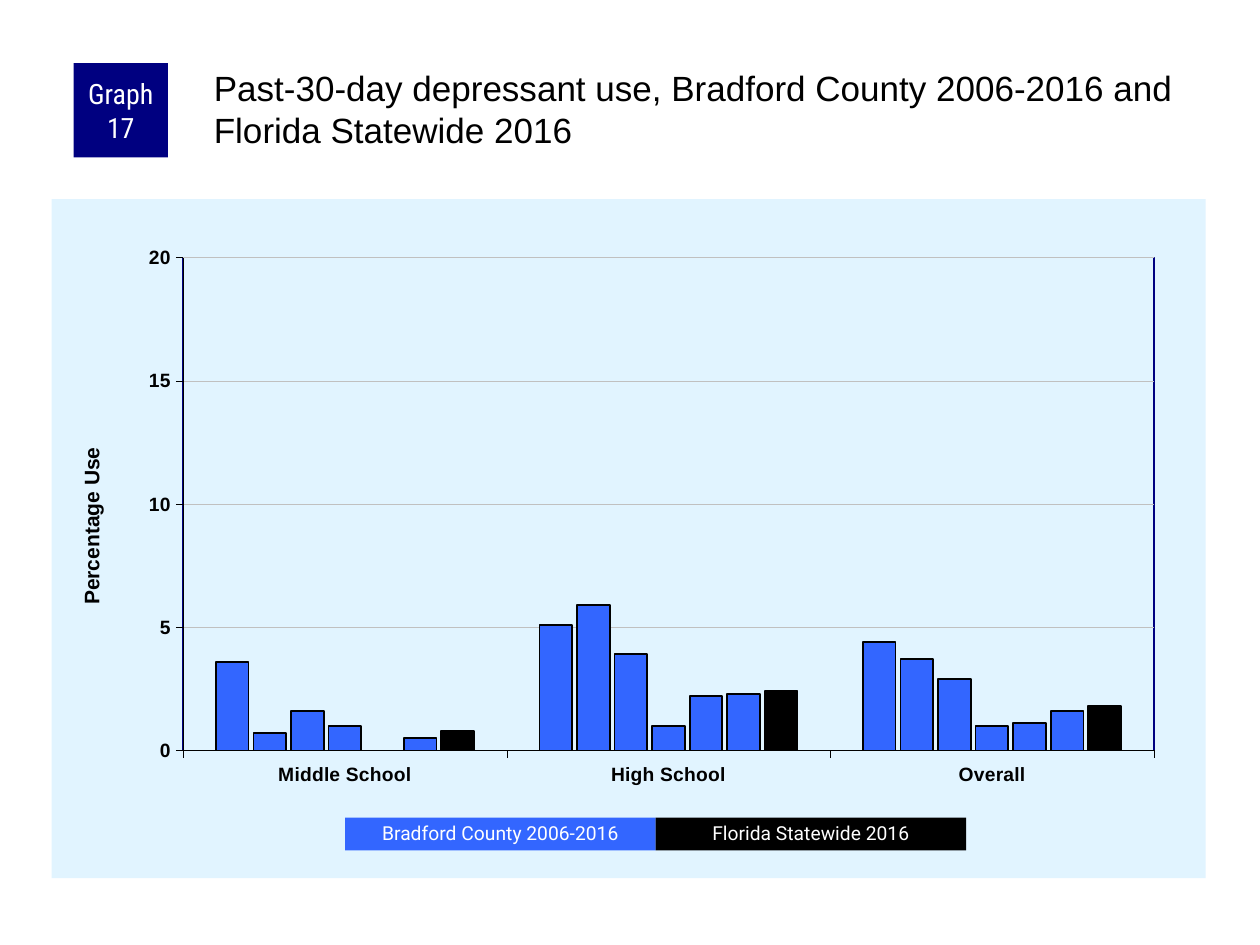
from dataclasses import dataclass

from lxml import etree
from pptx import Presentation
from pptx.chart import data as cd
from pptx.dml.color import RGBColor
from pptx.enum import chart as ch, shapes, text
from pptx.util import Pt

C = "http://schemas.openxmlformats.org/drawingml/2006/chart"
A = "http://schemas.openxmlformats.org/drawingml/2006/main"


@dataclass(frozen=True)
class Theme:
    navy: str = "000080"
    blue: str = "3366FF"
    black: str = "000000"
    white: str = "FFFFFF"
    panel: str = "E1F4FF"
    grid: str = "C0C0C0"
    body_font: str = "Arial"
    tag_font: str = "Roboto Condensed"
    key_font: str = "Roboto"
    title_size: float = 20
    tag_size: float = 16
    axis_title_size: float = 12
    label_size: float = 11
    chart_size: float = 8


@dataclass(frozen=True)
class Box:
    x: float
    y: float
    w: float
    h: float

    def pts(self) -> tuple:
        return Pt(self.x), Pt(self.y), Pt(self.w), Pt(self.h)


@dataclass(frozen=True)
class Label:
    content: str
    box: Box
    fill: str
    font: str
    size: float
    spacing: float = 1.0
    insets: tuple = (7.2, 3.6, 7.2, 3.6)


T = Theme()
KEY_X, KEY_Y, KEY_W, KEY_H = 197.3, 467.3, 177.4, 18.7
LABELS = [
    Label("Graph 17", Box(42, 36, 54, 54), T.navy, T.tag_font, T.tag_size,
          insets=(3.6, 0, 3.6, 0)),
] + [
    Label(name, Box(KEY_X + i * KEY_W, KEY_Y, KEY_W, KEY_H), color, T.key_font,
          T.label_size, 0.9)
    for i, (name, color) in enumerate([("Bradford County 2006-2016", T.blue),
                                       ("Florida Statewide 2016", T.black)])
]
CATEGORIES = ["Middle School", "High School", "Overall"]
VALUES = [(3.6, 5.1, 4.4), (0.7, 5.9, 3.7), (1.6, 3.9, 2.9), (1, 1, 1),
          (0, 2.2, 1.1), (0.5, 2.3, 1.6), (0.8, 2.4, 1.8)]


def rgb(color: str) -> RGBColor:
    return RGBColor.from_string(color)


def style_font(font, name: str, size: float, color: str, bold: bool = False) -> None:
    font.name, font.size, font.bold = name, Pt(size), bold
    font.color.rgb = rgb(color)


def style_line(line, color: str, width: float) -> None:
    line.color.rgb = rgb(color)
    line.width = Pt(width)


def write_text(tf, content: str, *, font: str, size: float, color: str, align,
               anchor, insets: tuple, spacing: float = 1.0) -> None:
    tf.word_wrap = True
    tf.auto_size = text.MSO_AUTO_SIZE.NONE
    tf.vertical_anchor = anchor
    (tf.margin_left, tf.margin_top,
     tf.margin_right, tf.margin_bottom) = (Pt(v) for v in insets)
    p = tf.paragraphs[0]
    p.alignment, p.line_spacing = align, spacing
    r = p.add_run()
    r.text = content
    style_font(r.font, font, size, color)


def add_label(slide, label: Label) -> None:
    sp = slide.shapes.add_shape(shapes.MSO_SHAPE.RECTANGLE, *label.box.pts())
    sp.shadow.inherit = False
    sp.fill.solid()
    sp.fill.fore_color.rgb = rgb(label.fill)
    sp.line.fill.background()
    write_text(sp.text_frame, label.content, font=label.font, size=label.size,
               color=T.white, align=text.PP_ALIGN.CENTER,
               anchor=text.MSO_ANCHOR.MIDDLE, insets=label.insets,
               spacing=label.spacing)


def set_layout(parent, index: int, **settings) -> None:
    for old in parent.findall(f"{{{C}}}layout"):
        parent.remove(old)
    layout = etree.Element(f"{{{C}}}layout")
    manual = etree.SubElement(layout, f"{{{C}}}manualLayout")
    for tag, val in settings.items():
        etree.SubElement(manual, f"{{{C}}}{tag}").set("val", str(val))
    parent.insert(index, layout)


def shape_props(fill: str, line: str, width: float):
    def paint(color: str) -> str:
        return (f'<a:solidFill><a:srgbClr val="{color}"/></a:solidFill>'
                if color else "<a:noFill/>")
    return etree.fromstring(
        f'<c:spPr xmlns:c="{C}" xmlns:a="{A}">{paint(fill)}'
        f'<a:ln w="{Pt(width)}">{paint(line)}</a:ln></c:spPr>')


def style_axis(axis) -> None:
    axis.major_tick_mark = ch.XL_TICK_MARK.OUTSIDE
    axis.minor_tick_mark = ch.XL_TICK_MARK.NONE
    style_font(axis.tick_labels.font, T.body_font, T.label_size, T.black, True)
    style_line(axis.format.line, T.black, 0.25)


def add_usage_chart(slide, box: Box) -> None:
    data = cd.CategoryChartData()
    data.categories = CATEGORIES
    for i, values in enumerate(VALUES, 1):
        data.add_series(f"Series {i}", values)
    chart = slide.shapes.add_chart(
        ch.XL_CHART_TYPE.COLUMN_CLUSTERED, *box.pts(), data).chart
    chart.has_legend = chart.has_title = False
    style_font(chart.font, T.body_font, T.chart_size, T.black)

    plot = chart.plots[0]
    plot.gap_width, plot.overlap, plot.vary_by_categories = 200, -15, False
    for series in plot.series:
        last = series.name == f"Series {len(VALUES)}"
        series.format.fill.solid()
        series.format.fill.fore_color.rgb = rgb(T.black if last else T.blue)
        series.invert_if_negative = False
        style_line(series.format.line, T.black, 1)

    axis = chart.value_axis
    axis.minimum_scale, axis.maximum_scale, axis.major_unit = 0, 20, 5
    axis.has_major_gridlines = True
    style_line(axis.major_gridlines.format.line, T.grid, 0.25)
    style_axis(axis)
    style_axis(chart.category_axis)
    axis.tick_labels.number_format = "0"
    axis.tick_labels.number_format_is_linked = False
    r = axis.axis_title.text_frame.paragraphs[0].add_run()
    r.text = "Percentage Use"
    style_font(r.font, T.body_font, T.axis_title_size, T.black, True)

    root = chart.element
    title = root.find(f".//{{{C}}}valAx/{{{C}}}title")
    set_layout(title, 1, xMode="edge", yMode="edge", x=0.02, y=0.36)
    area = root.find(f".//{{{C}}}plotArea")
    set_layout(area, 0, layoutTarget="inner", xMode="edge", yMode="edge",
               x=0.114, y=0.086, w=0.841, h=0.726)
    area.append(shape_props("", T.navy, 1))
    root.find(f"{{{C}}}chart").addnext(shape_props(T.panel, "", 0))


def main() -> None:
    prs = Presentation()
    prs.slide_width, prs.slide_height = Pt(720), Pt(540)
    slide = prs.slides.add_slide(prs.slide_layouts[5])
    title = slide.shapes.title
    title.left, title.top, title.width, title.height = Box(120, 36, 570, 60).pts()
    write_text(title.text_frame,
               "Past-30-day depressant use, Bradford County 2006-2016 and "
               "Florida Statewide 2016",
               font=T.body_font, size=T.title_size, color=T.black,
               align=text.PP_ALIGN.LEFT, anchor=text.MSO_ANCHOR.TOP,
               insets=(2.2, 2.2, 0, 0))
    add_usage_chart(slide, Box(29.5, 113.8, 659.5, 388))
    for label in LABELS:
        add_label(slide, label)
    prs.save("out.pptx")


if __name__ == "__main__":
    main()
